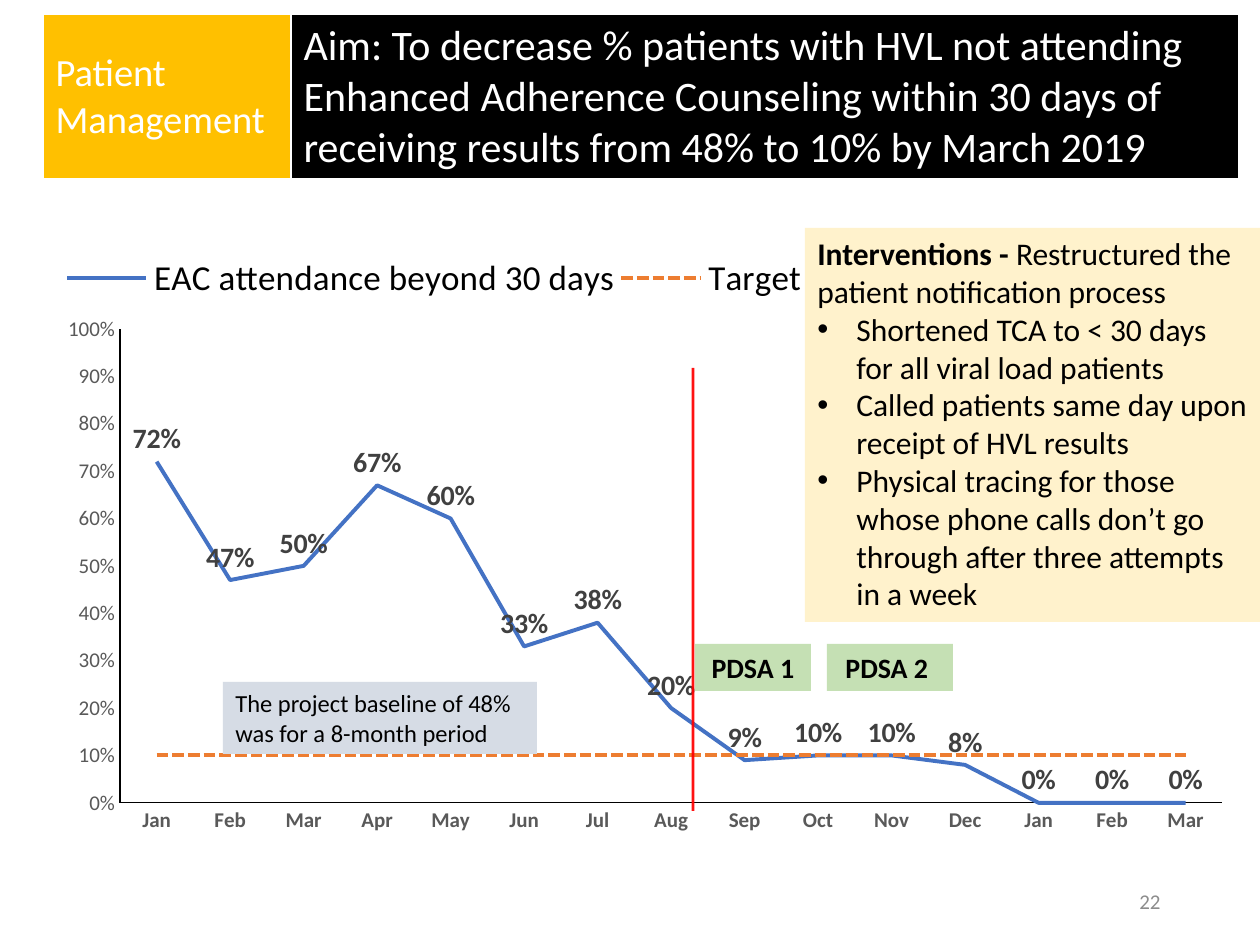
"""Builds the patient management improvement slide."""
from dataclasses import dataclass

from lxml import etree
from pptx import Presentation
from pptx.chart.data import CategoryChartData
from pptx.dml.color import RGBColor
from pptx.enum.chart import XL_CHART_TYPE, XL_LABEL_POSITION, XL_LEGEND_POSITION, XL_MARKER_STYLE, XL_TICK_MARK
from pptx.enum.dml import MSO_LINE
from pptx.enum.shapes import MSO_CONNECTOR, MSO_SHAPE
from pptx.enum.text import MSO_ANCHOR, PP_ALIGN
from pptx.oxml import parse_xml
from pptx.oxml.ns import nsdecls, qn
from pptx.util import Emu, Pt

LINE_CHART = XL_CHART_TYPE.LINE
ABOVE = XL_LABEL_POSITION.ABOVE
LEGEND_TOP = XL_LEGEND_POSITION.TOP
NO_MARKER = XL_MARKER_STYLE.NONE
NO_TICK = XL_TICK_MARK.NONE
DASH = MSO_LINE.SQUARE_DOT
STRAIGHT = MSO_CONNECTOR.STRAIGHT
RECT = MSO_SHAPE.RECTANGLE
TOP, MIDDLE = MSO_ANCHOR.TOP, MSO_ANCHOR.MIDDLE
LEFT, CENTER, RIGHT = PP_ALIGN.LEFT, PP_ALIGN.CENTER, PP_ALIGN.RIGHT
PX = 914400 / 126

MONTHS = "Jan Feb Mar Apr May Jun Jul Aug Sep Oct Nov Dec Jan Feb Mar".split()
ATTENDANCE = [0.72, 0.47, 0.5, 0.67, 0.6, 0.33, 0.38, 0.2, 0.09, 0.1, 0.1, 0.08, 0, 0, 0]
TARGET = [0.1] * len(MONTHS)
AIM = ("Aim: To decrease % patients with HVL not attending Enhanced Adherence Counseling "
       "within 30 days of receiving results from 48% to 10% by March 2019")
INTERVENTIONS = [
    "Shortened TCA to < 30 days for all viral load patients",
    "Called patients same day upon receipt of HVL results",
    "Physical tracing for those whose phone calls don’t go through after three attempts in a week",
]


@dataclass(frozen=True)
class Theme:
    """Colours, type sizes and font of the slide."""
    font: str = "Calibri"
    black: str = "000000"
    white: str = "FFFFFF"
    gold: str = "FFC000"
    cream: str = "FFF2CC"
    green: str = "C5E0B4"
    grey_blue: str = "D6DCE5"
    blue: str = "4472C4"
    orange: str = "ED7D31"
    red: str = "FF0000"
    axis: str = "595959"
    label: str = "404040"
    page: str = "8C8C8C"
    aim: int = 24
    topic: int = 22
    legend: int = 20
    body: int = 18
    tag: int = 16
    note: int = 14
    small: int = 12


def px(*values):
    """Turns pixel lengths into EMU."""
    return [Emu(round(v * PX)) for v in values]


def rgb(color):
    """Turns a hex string into a colour."""
    return RGBColor.from_string(color)


def format_font(font, size, color, name, bold=False):
    """Sets the look of a font."""
    font.size, font.bold, font.name = Pt(size), bold, name
    font.color.rgb = rgb(color)


def write(p, text, align=LEFT, **style):
    """Adds a formatted run to a paragraph."""
    p.alignment = align
    r = p.add_run()
    r.text = text
    format_font(r.font, **style)


def layout_xml(x, y, w, h, inner=False):
    """Returns a manual chart layout in fractions of the chart."""
    target = '<c:layoutTarget val="inner"/>' if inner else ""
    modes = '<c:xMode val="edge"/><c:yMode val="edge"/>'
    sizes = "".join(f'<c:{k} val="{v}"/>' for k, v in zip("xywh", (x, y, w, h)))
    return parse_xml(f'<c:layout {nsdecls("c")}><c:manualLayout>{target}{modes}{sizes}'
                     '</c:manualLayout></c:layout>')


class SlideBuilder:
    """Holds the theme and the current slide."""

    def __init__(self, s, theme):
        """Keeps the slide and its theme."""
        self.s, self.theme = s, theme

    def style(self, size, color=None, bold=False):
        """Returns the font settings for a run."""
        return dict(size=size, color=color or self.theme.black, name=self.theme.font, bold=bold)

    def box(self, at, fill):
        """Adds a filled rectangle and returns its text frame."""
        sp = self.s.shapes.add_shape(RECT, *px(*at))
        sp.shadow.inherit = False
        sp.fill.solid()
        sp.fill.fore_color.rgb = rgb(fill)
        sp.line.fill.background()
        tf = sp.text_frame
        tf.word_wrap, tf.vertical_anchor = True, TOP
        return tf

    def label(self, at, fill, text, size, align=LEFT, bold=False):
        """Adds a rectangle with one paragraph."""
        write(self.box(at, fill).paragraphs[0], text, align, **self.style(size, bold=bold))

    def bullet_box(self, at, fill, lead, text, items, size):
        """Adds a rectangle with a lead sentence and bullets."""
        tf = self.box(at, fill)
        p = tf.paragraphs[0]
        write(p, lead, **self.style(size, bold=True))
        write(p, text, **self.style(size))
        indent = px(39)[0]
        for item in items:
            p = tf.add_paragraph()
            write(p, item, **self.style(size))
            pPr = p._p.get_or_add_pPr()
            pPr.set("marL", str(indent))
            pPr.set("indent", str(-indent))
            etree.SubElement(pPr, qn("a:buFont")).set("typeface", "Arial")
            etree.SubElement(pPr, qn("a:buChar")).set("char", "•")

    def text(self, at, text, size, color, align):
        """Adds a text box."""
        tf = self.s.shapes.add_textbox(*px(*at)).text_frame
        tf.word_wrap, tf.vertical_anchor = True, MIDDLE
        write(tf.paragraphs[0], text, align, **self.style(size, color))

    def line(self, start, end, color, width, alpha):
        """Adds a straight, slightly transparent line."""
        cx = self.s.shapes.add_connector(STRAIGHT, *px(*start, *end))
        cx.line.color.rgb, cx.line.width = rgb(color), Pt(width)
        spPr = cx._element.spPr
        clr = next(spPr.iter(qn("a:srgbClr")))
        etree.SubElement(clr, qn("a:alpha")).set("val", str(alpha * 1000))
        etree.SubElement(spPr, qn("a:effectLst"))

    def banner(self, at, widths, cells):
        """Adds a one-row table with white borders."""
        table = self.s.shapes.add_table(1, len(cells), *px(*at)).table
        for i, (text, size, fill, anchor) in enumerate(cells):
            table.columns[i].width = px(widths[i])[0]
            cell = table.cell(0, i)
            cell.vertical_anchor = anchor
            cell.fill.solid()
            cell.fill.fore_color.rgb = rgb(fill)
            write(cell.text_frame.paragraphs[0], text, **self.style(size, self.theme.white))
            tcPr = cell._tc.get_or_add_tcPr()
            for k, (side, width) in enumerate(zip("LRTB", (1, 1, 1, 3))):
                tcPr.insert(k, parse_xml(
                    f'<a:ln{side} {nsdecls("a")} w="{Pt(width)}"><a:solidFill>'
                    f'<a:srgbClr val="{self.theme.white}"/></a:solidFill></a:ln{side}>'))

    def line_chart(self, at, categories, series, plot_area, legend_area):
        """Adds a percent line chart with labels on the first series."""
        t = self.theme
        data = CategoryChartData(number_format="0%")
        data.categories = categories
        for name, values, _, _ in series:
            data.add_series(name, values)
        chart = self.s.shapes.add_chart(LINE_CHART, *px(*at), data).chart
        chart.has_title = False
        format_font(chart.font, **self.style(10))
        for ser, (_, _, color, dash) in zip(chart.plots[0].series, series):
            ser.smooth, ser.marker.style = False, NO_MARKER
            ser.format.line.color.rgb, ser.format.line.width = rgb(color), Pt(2.25)
            ser.format.line.dash_style = dash
        chart.plots[0].vary_by_categories = False
        labels = chart.plots[0].series[0].data_labels
        labels.show_value, labels.position = True, ABOVE
        labels.number_format, labels.number_format_is_linked = "0%", False
        format_font(labels.font, **self.style(t.tag, t.label, True))
        for axis, bold in ((chart.category_axis, True), (chart.value_axis, False)):
            axis.has_major_gridlines = False
            axis.major_tick_mark = axis.minor_tick_mark = NO_TICK
            axis.format.line.color.rgb, axis.format.line.width = rgb(t.black), Pt(0.75)
            format_font(axis.tick_labels.font, **self.style(t.small, t.axis, bold))
        axis.minimum_scale, axis.maximum_scale, axis.major_unit = 0, 1, 0.1
        axis.tick_labels.number_format, axis.tick_labels.number_format_is_linked = "0%", False
        chart.has_legend = True
        legend = chart.legend
        legend.position, legend.include_in_layout = LEGEND_TOP, False
        format_font(legend.font, **self.style(t.legend))
        for parent, index, layout in ((chart._chartSpace.chart.plotArea, 0, layout_xml(*plot_area, inner=True)),
                                      (legend._element, 1, layout_xml(*legend_area))):
            for old in parent.findall(qn("c:layout")):
                parent.remove(old)
            parent.insert(index, layout)


prs = Presentation()
prs.slide_width, prs.slide_height = px(1260, 945)
t = Theme()
b = SlideBuilder(prs.slides.add_slide(prs.slide_layouts[6]), t)
b.line_chart((37, 251, 1186, 600), MONTHS,
             [("EAC attendance beyond 30 days", ATTENDANCE, t.blue, None), ("Target", TARGET, t.orange, DASH)],
             plot_area=(0.07, 0.13, 0.93, 0.79), legend_area=(0.02, 0, 0.63, 0.09))
b.line((693, 368), (693, 811), t.red, 1.5, alpha=93)
b.label((223, 682, 314, 72), t.grey_blue, "The project baseline of 48% was for a 8-month period", t.note)
for x, w, name in ((695, 116, "PDSA 1"), (827, 126, "PDSA 2 ")):
    b.label((x, 644, w, 47), t.green, name, t.tag, CENTER, bold=True)
b.banner((43, 14, 1196, 164), (248, 948),
         [("Patient Management", t.topic, t.gold, MIDDLE), (AIM, t.aim, t.black, TOP)])
b.bullet_box((805, 228, 455, 394), t.cream, "Interventions - ",
             "Restructured the patient notification process", INTERVENTIONS, t.body)
b.text((890, 876, 283, 50), "22", t.small, t.page, RIGHT)
prs.save("out.pptx")
